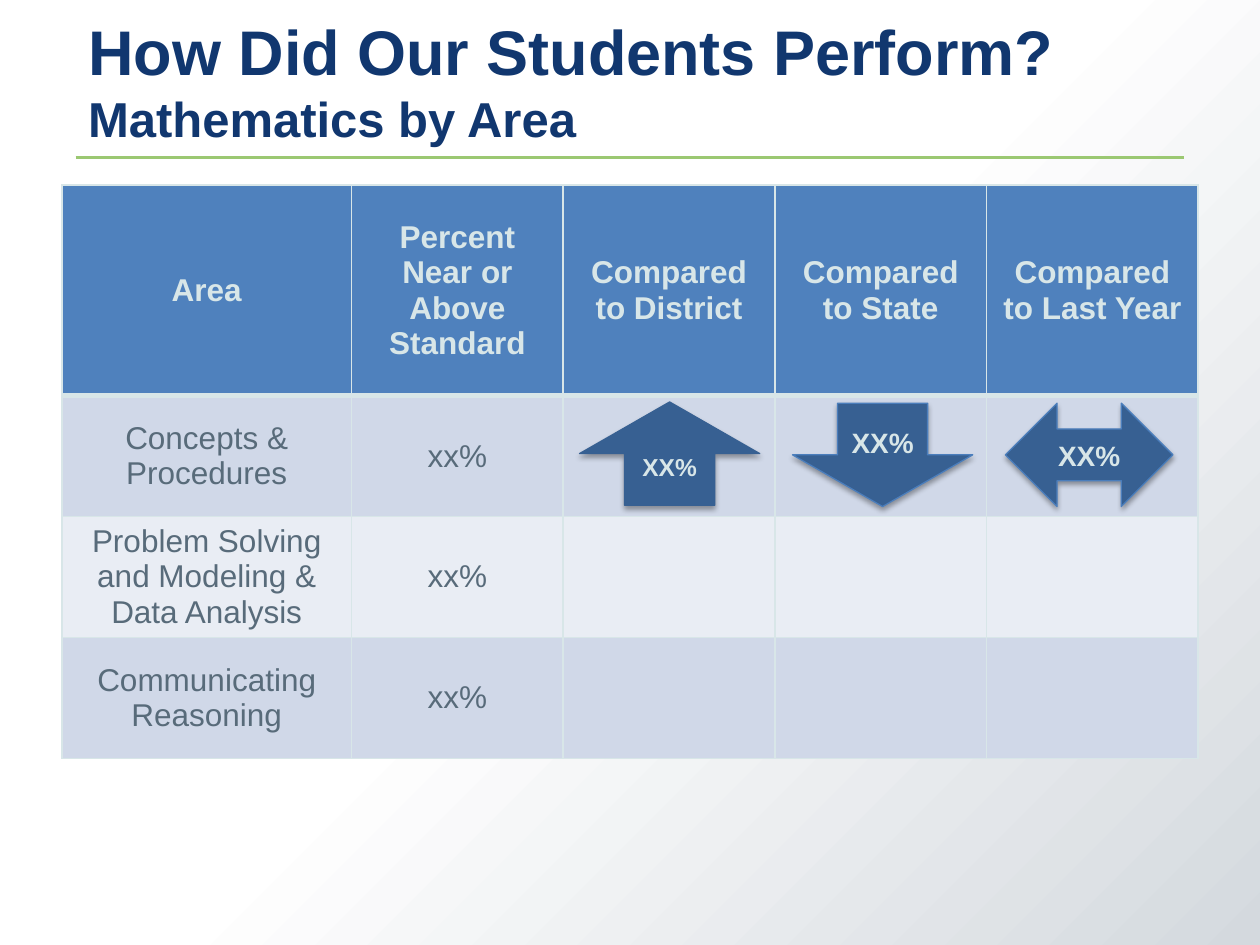
"""Build the mathematics performance slide with its comparison table and arrows."""
from dataclasses import dataclass

from lxml.etree import SubElement
from pptx import Presentation
from pptx.dml.color import RGBColor
from pptx.enum.shapes import MSO_CONNECTOR, MSO_SHAPE
from pptx.enum.text import MSO_ANCHOR, MSO_AUTO_SIZE, PP_ALIGN
from pptx.oxml.ns import qn
from pptx.util import Inches, Pt

NAVY = RGBColor(0x11, 0x37, 0x6F)
GREEN = RGBColor(0x9B, 0xC8, 0x72)
PALE = RGBColor(0xD8, 0xE6, 0xE8)
SLATE = RGBColor(0x58, 0x6B, 0x7A)
HEADER_BLUE = RGBColor(0x4F, 0x81, 0xBD)
BAND_DARK = RGBColor(0xD0, 0xD8, 0xE8)
BAND_LIGHT = RGBColor(0xE9, 0xED, 0xF4)
ARROW_BLUE = RGBColor(0x37, 0x60, 0x92)
ARROW_EDGE = RGBColor(0x4B, 0x7E, 0xBC)
WHITE = RGBColor(0xFF, 0xFF, 0xFF)
SILVER = RGBColor(0xD4, 0xD9, 0xDE)

COLUMN_WIDTHS = (2.3, 1.68, 1.68, 1.68, 1.68)
ROW_HEIGHTS = (1.67, 0.96, 0.96, 0.96)
TABLE_ROWS = (
    ("Area", "Percent Near or Above Standard", "Compared to District",
     "Compared to State", "Compared to Last Year"),
    ("Concepts & Procedures", "xx%", "", "", ""),
    ("Problem Solving and Modeling & Data Analysis", "xx%", "", "", ""),
    ("Communicating Reasoning", "xx%", "", "", ""),
)


@dataclass(frozen=True)
class Arrow:
    """A comparison arrow and its place in inches."""

    kind: MSO_SHAPE
    left: float
    top: float
    width: float
    size: int
    edge: RGBColor


ARROWS = (
    Arrow(MSO_SHAPE.UP_ARROW, 4.6, 3.19, 1.43, 14, ARROW_BLUE),
    Arrow(MSO_SHAPE.DOWN_ARROW, 6.29, 3.2, 1.43, 16, ARROW_EDGE),
    Arrow(MSO_SHAPE.LEFT_RIGHT_ARROW, 7.98, 3.2, 1.33, 16, ARROW_EDGE),
)


def add_span(para, text: str, size: int, color: RGBColor, bold: bool) -> None:
    """Append one formatted run to a paragraph."""
    span = para.add_run()
    span.text = text
    for name, value in {"name": "Arial", "size": Pt(size), "bold": bold}.items():
        setattr(span.font, name, value)
    span.font.color.rgb = color


def paint_background(page) -> None:
    """Fill the page with a diagonal gradient."""
    fill = page.background.fill
    fill.gradient()
    fill.gradient_angle = 315
    for stop, position, color in zip(fill.gradient_stops, (0.5, 1), (WHITE, SILVER)):
        stop.position = position
        stop.color.rgb = color


def add_rule(page) -> None:
    """Draw the green line under the title."""
    rule = page.shapes.add_connector(
        MSO_CONNECTOR.STRAIGHT, Inches(0.6), Inches(1.25), Inches(9.4), Inches(1.25))
    rule.line.color.rgb = GREEN
    rule.line.width = Pt(2)
    SubElement(rule._element.spPr, qn("a:effectLst"))


def fill_title(page) -> None:
    """Place the two-line title."""
    title = page.shapes.title
    place = {"left": 0.6, "top": 0.6, "width": 8.81, "height": 0.62}
    for name, value in place.items():
        setattr(title, name, Inches(value))
    frame = title.text_frame
    layout = {"auto_size": MSO_AUTO_SIZE.NONE, "word_wrap": True,
              "vertical_anchor": MSO_ANCHOR.BOTTOM}
    for name, value in layout.items():
        setattr(frame, name, value)
    para = frame.paragraphs[0]
    para.alignment = PP_ALIGN.LEFT
    add_span(para, "How Did Our Students Perform?", 36, NAVY, True)
    para.add_line_break()
    SubElement(para._p[-1], qn("a:rPr"), sz="3600")
    add_span(para, "Mathematics by Area", 28, NAVY, True)


def add_borders(cell, bottom_width: int) -> None:
    """Give a cell pale borders on its four sides."""
    properties = cell._tc.get_or_add_tcPr()
    widths = {"a:lnL": 1, "a:lnR": 1, "a:lnT": 1, "a:lnB": bottom_width}
    for index, (tag, width) in enumerate(widths.items()):
        border = SubElement(properties, qn(tag), w=str(Pt(width)))
        fill = SubElement(border, qn("a:solidFill"))
        SubElement(fill, qn("a:srgbClr"), val=str(PALE))
        properties.insert(index, border)


def add_results_table(page) -> None:
    """Draw the table of areas and comparisons."""
    table = page.shapes.add_table(
        len(TABLE_ROWS), len(COLUMN_WIDTHS), Inches(0.49), Inches(1.47),
        Inches(sum(COLUMN_WIDTHS)), Inches(sum(ROW_HEIGHTS))).table
    for column, width in zip(table.columns, COLUMN_WIDTHS):
        column.width = Inches(width)
    for row, height in zip(table.rows, ROW_HEIGHTS):
        row.height = Inches(height)
    for row_index, texts in enumerate(TABLE_ROWS):
        header = row_index == 0
        band = BAND_DARK if row_index % 2 else BAND_LIGHT
        for column_index, text in enumerate(texts):
            cell = table.cell(row_index, column_index)
            cell.vertical_anchor = MSO_ANCHOR.MIDDLE
            cell.fill.solid()
            cell.fill.fore_color.rgb = HEADER_BLUE if header else band
            add_borders(cell, 3 if header else 1)
            if text:
                para = cell.text_frame.paragraphs[0]
                para.alignment = PP_ALIGN.CENTER
                add_span(para, text, 18, PALE if header else SLATE, header)


def add_shadow(shape) -> None:
    """Cast a soft shadow below a shape."""
    effects = SubElement(shape._element.spPr, qn("a:effectLst"))
    shadow = SubElement(effects, qn("a:outerShdw"), blurRad=str(Pt(3.1)),
                        dist=str(Pt(1.8)), dir="5400000", rotWithShape="0")
    color = SubElement(shadow, qn("a:srgbClr"), val="000000")
    SubElement(color, qn("a:alpha"), val="35000")


def add_arrow(page, arrow: Arrow) -> None:
    """Draw one labelled comparison arrow."""
    shape = page.shapes.add_shape(
        arrow.kind, Inches(arrow.left), Inches(arrow.top),
        Inches(arrow.width), Inches(0.82))
    shape.fill.solid()
    shape.fill.fore_color.rgb = ARROW_BLUE
    shape.line.color.rgb = arrow.edge
    shape.line.width = Pt(0.75)
    add_shadow(shape)
    shape.text_frame.vertical_anchor = MSO_ANCHOR.MIDDLE
    para = shape.text_frame.paragraphs[0]
    para.alignment = PP_ALIGN.CENTER
    add_span(para, "XX%", arrow.size, PALE, True)


def main() -> None:
    """Build and save the deck."""
    deck = Presentation()
    deck.slide_width, deck.slide_height = Inches(10), Inches(7.5)
    page = deck.slides.add_slide(deck.slide_layouts.get_by_name("Title Only"))
    paint_background(page)
    add_rule(page)
    fill_title(page)
    add_results_table(page)
    for arrow in ARROWS:
        add_arrow(page, arrow)
    deck.save("out.pptx")


if __name__ == "__main__":
    main()
